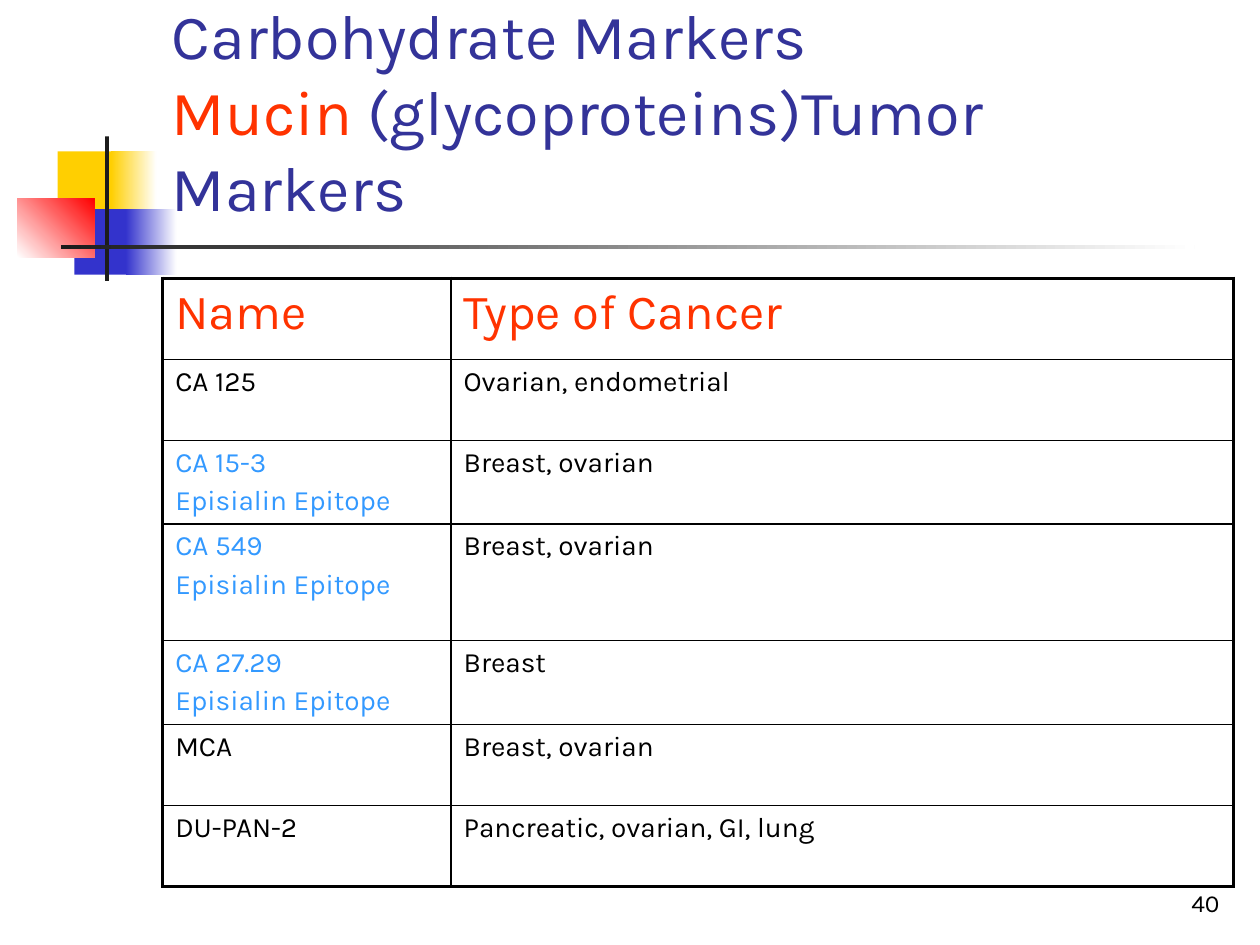
from lxml import etree
from pptx import Presentation
from pptx import util as u
from pptx.dml import color
from pptx.enum import shapes, text
from pptx.oxml import ns

FONT = "Karla"
BLACK, RED, BLUE, NAVY = "000000", "FF3300", "3399FF", "333399"
YELLOW, INDIGO, CHARCOAL, WHITE = "FFCF01", "3333CC", "1C1C1C", "FFFFFF"

DECORATIONS = [
    ((33, 86.5, 34.5, 37.5), [YELLOW], 0),
    ((63.5, 86.5, 26, 37.5), [YELLOW, WHITE], 0),
    ((42.5, 119.5, 33, 37.5), [INDIGO], 0),
    ((72, 119.5, 29, 37.5), [INDIGO, WHITE], 0),
    ((10, 113.5, 44, 33.5), [WHITE, "FF0000"], 45),
    ((60, 78, 2.3, 82.5), [CHARCOAL], 0),
    ((34.75, 140, 648, 2.5), [CHARCOAL, WHITE], 0),
]
TITLE = [
    [("Carbohydrate Markers", NAVY)],
    [("Mucin ", RED), ("(glycoproteins)Tumor Markers", NAVY)],
]
ROWS = [
    (["Name"], "Type of Cancer", RED, RED, 28, 46.3),
    (["CA 125"], "Ovarian, endometrial", BLACK, BLACK, 16, 46.3),
    (["CA 15-3", "Episialin Epitope"], "Breast, ovarian", BLUE, BLACK, 16, 47.8),
    (["CA 549", "Episialin Epitope"], "Breast, ovarian", BLUE, BLACK, 16, 66.6),
    (["CA 27.29", "Episialin Epitope"], "Breast", BLUE, BLACK, 16, 47.8),
    (["MCA"], "Breast, ovarian", BLACK, BLACK, 16, 46.3),
    (["DU-PAN-2"], "Pancreatic, ovarian, GI, lung", BLACK, BLACK, 16, 46.3),
]
COLUMN_WIDTHS = [164.8, 447.2]


def rgb(value):
    return color.RGBColor.from_string(value)


def points(*values):
    return [u.Pt(value) for value in values]


def style(font, size, value):
    font.name, font.size = FONT, u.Pt(size)
    font.color.rgb = rgb(value)


def add_decoration(slide, place, colours, angle):
    block = slide.shapes.add_shape(shapes.MSO_SHAPE.RECTANGLE, *points(*place))
    block.shadow.inherit = False
    block.line.fill.background()
    if len(colours) == 1:
        block.fill.solid()
        block.fill.fore_color.rgb = rgb(colours[0])
        return
    block.fill.gradient()
    block.fill.gradient_angle = angle
    for position, (stop, value) in enumerate(zip(block.fill.gradient_stops, colours)):
        stop.position = position
        stop.color.rgb = rgb(value)


def add_title(slide):
    title = slide.shapes.title
    title.left, title.top, title.width, title.height = points(91, 16.5, 613, 115)
    frame = title.text_frame
    frame.word_wrap = True
    frame.auto_size = text.MSO_AUTO_SIZE.NONE
    frame.vertical_anchor = text.MSO_ANCHOR.BOTTOM
    para = frame.paragraphs[0]
    para.alignment = text.PP_ALIGN.LEFT
    for index, line in enumerate(TITLE):
        if index:
            para.add_line_break()
        for words, value in line:
            span = para.add_run()
            span.text = words
            style(span.font, 36, value)
    slide.shapes._spTree.append(title._element)


def add_page_number(slide):
    box = slide.shapes.add_textbox(*points(554.5, 492, 149.5, 36))
    frame = box.text_frame
    frame.word_wrap = True
    frame.vertical_anchor = text.MSO_ANCHOR.BOTTOM
    para = frame.paragraphs[0]
    para.text = "40"
    para.alignment = text.PP_ALIGN.RIGHT
    style(para.font, 14, BLACK)


def set_borders(cell, widths):
    properties = cell._tc.get_or_add_tcPr()
    for index, (side, width) in enumerate(widths.items()):
        line = etree.Element(ns.qn(f"a:ln{side}"), w=str(u.Pt(width)))
        fill = etree.SubElement(line, ns.qn("a:solidFill"))
        etree.SubElement(fill, ns.qn("a:srgbClr"), val=BLACK)
        properties.insert(index, line)


def fill_cell(cell, lines, size, value):
    cell.fill.background()
    cell.text = "\n".join(lines)
    for para in cell.text_frame.paragraphs:
        para.space_before = u.Pt(size * 0.2)
        style(para.font, size, value)


def add_marker_table(slide):
    heights = [row[-1] for row in ROWS]
    place = points(93, 159, sum(COLUMN_WIDTHS), sum(heights))
    table = slide.shapes.add_table(len(ROWS), len(COLUMN_WIDTHS), *place).table
    table.first_row = table.horz_banding = False
    for column, width in zip(table.columns, COLUMN_WIDTHS):
        column.width = u.Pt(width)
    last = len(ROWS) - 1
    for index, (names, cancer, name_colour, cancer_colour, size, height) in enumerate(ROWS):
        table.rows[index].height = u.Pt(height)
        contents = [(names, name_colour), ([cancer], cancer_colour)]
        for side, (lines, value) in enumerate(contents):
            cell = table.cell(index, side)
            fill_cell(cell, lines, size, value)
            outer = {"L": side == 0, "R": side == 1, "T": index == 0, "B": index == last}
            set_borders(cell, {edge: 2.25 if thick else 1 for edge, thick in outer.items()})


def main():
    deck = Presentation()
    deck.slide_width, deck.slide_height = points(720, 540)
    slide = deck.slides.add_slide(deck.slide_layouts.get_by_name("Title Only"))
    for decoration in DECORATIONS:
        add_decoration(slide, *decoration)
    add_page_number(slide)
    add_title(slide)
    add_marker_table(slide)
    deck.save("out.pptx")


if __name__ == "__main__":
    main()
